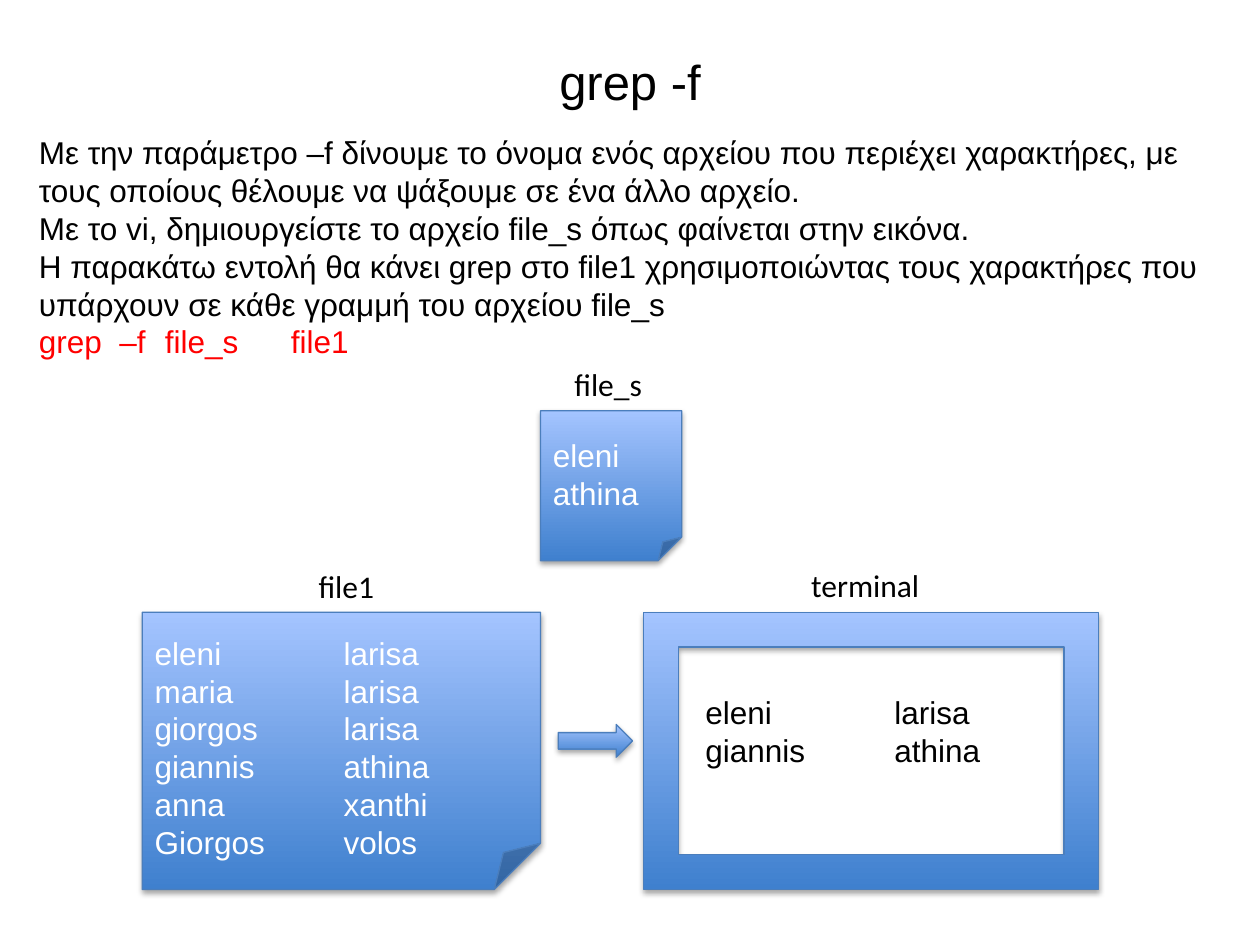
import pptx
import pptx.util
import pptx.dml.color
import pptx.enum.shapes
import pptx.enum.text
import pptx.oxml

Inches, Pt = pptx.util.Inches, pptx.util.Pt
SHAPE = pptx.enum.shapes.MSO_SHAPE
ANCHOR = pptx.enum.text.MSO_ANCHOR
ALIGN = pptx.enum.text.PP_ALIGN
color = pptx.dml.color.RGBColor.from_string

SHADOW = (
    '<a:effectLst xmlns:a="http://schemas.openxmlformats.org/drawingml/2006/main">'
    '<a:outerShdw blurRad="40000" dist="23000" dir="5400000" rotWithShape="0">'
    '<a:srgbClr val="000000"><a:alpha val="35000"/></a:srgbClr>'
    '</a:outerShdw></a:effectLst>'
)


def write(box, lines, hexes, font="Arial", size=18, align=ALIGN.LEFT, wrap=True):
    frame = box.text_frame
    frame.word_wrap = wrap
    frame.text = "\n".join(lines)
    for para, hex_color in zip(frame.paragraphs, hexes):
        para.alignment = align
        para.font.name, para.font.size = font, Pt(size)
        para.font.color.rgb = color(hex_color)
    return frame


def add_blue(kind, *place):
    shape = page.shapes.add_shape(kind, *map(Inches, place))
    shape.fill.gradient()
    shape.fill.gradient_angle = 90
    for stop, hex_color, position in zip(shape.fill.gradient_stops, ("3F80CE", "A4C4FF"), (0, 1)):
        stop.color.rgb, stop.position = color(hex_color), position
    shape.line.color.rgb, shape.line.width = color("4B7EBC"), Pt(0.75)
    shape.shadow.inherit = False
    properties = shape.fill._xPr
    properties.remove(properties.find(pptx.oxml.ns.qn("a:effectLst")))
    properties.append(pptx.oxml.parse_xml(SHADOW))
    return shape


deck = pptx.Presentation()
deck.slide_width, deck.slide_height = Inches(10), Inches(7.5)
page = deck.slides.add_slide(deck.slide_layouts[6])

# Title
title = page.shapes.add_textbox(*map(Inches, (0.5, 0.3, 9, 0.68)))
write(title, ["grep -f"], ["000000"], size=28, align=ALIGN.CENTER).vertical_anchor = ANCHOR.MIDDLE

# Explanation, ending in the command in red
explanation = [
    "Με την παράμετρο –f δίνουμε το όνομα ενός αρχείου που περιέχει χαρακτήρες, με τους οποίους θέλουμε να ψάξουμε σε ένα άλλο αρχείο.",
    "Με το vi, δημιουργείστε το αρχείο file_s όπως φαίνεται στην εικόνα.",
    "H παρακάτω εντολή θα κάνει grep στο file1 χρησιμοποιώντας τους χαρακτήρες που υπάρχουν σε κάθε γραμμή του αρχείου file_s",
    "grep  –f\tfile_s\tfile1",
]
body = page.shapes.add_textbox(*map(Inches, (0.21, 1.01, 9.61, 1.92)))
write(body, explanation, ["000000"] * 3 + ["FF0000"])

# Lower row: file1, arrow, terminal
row_top, row_height = 4.86, 2.2
people = ["eleni\t\tlarisa", "maria\t\tlarisa", "giorgos\t\tlarisa",
          "giannis\t\tathina", "anna\t\txanthi", "Giorgos\t\tvolos"]
file1 = add_blue(SHAPE.FOLDED_CORNER, 1.13, row_top, 3.16, row_height)
frame = write(file1, people, ["FFFFFF"] * len(people))
frame.vertical_anchor = ANCHOR.TOP
frame.margin_top, frame.margin_bottom = Inches(0.17), 0

add_blue(SHAPE.RIGHT_ARROW, 4.43, 5.75, 0.59, 0.26)
add_blue(SHAPE.FRAME, 5.11, row_top, 3.61, row_height)
matches = page.shapes.add_textbox(*map(Inches, (5.5, 5.45, 2.89, 0.71)))
write(matches, ["eleni\t\tlarisa", "giannis\t\tathina"], ["000000"] * 2)

# Pattern file above
file_s = add_blue(SHAPE.FOLDED_CORNER, 4.29, 3.26, 1.12, 1.19)
write(file_s, ["eleni", "athina"], ["FFFFFF"] * 2).vertical_anchor = ANCHOR.MIDDLE

# Captions
for name, left, top, width in (("file1", 2.43, 4.45, 0.65),
                               ("terminal", 6.34, 4.44, 1.07),
                               ("file_s", 4.46, 2.85, 0.75)):
    caption = page.shapes.add_textbox(*map(Inches, (left, top, width, 0.4)))
    write(caption, [name], ["000000"], font="Calibri", wrap=False)

deck.save("out.pptx")
